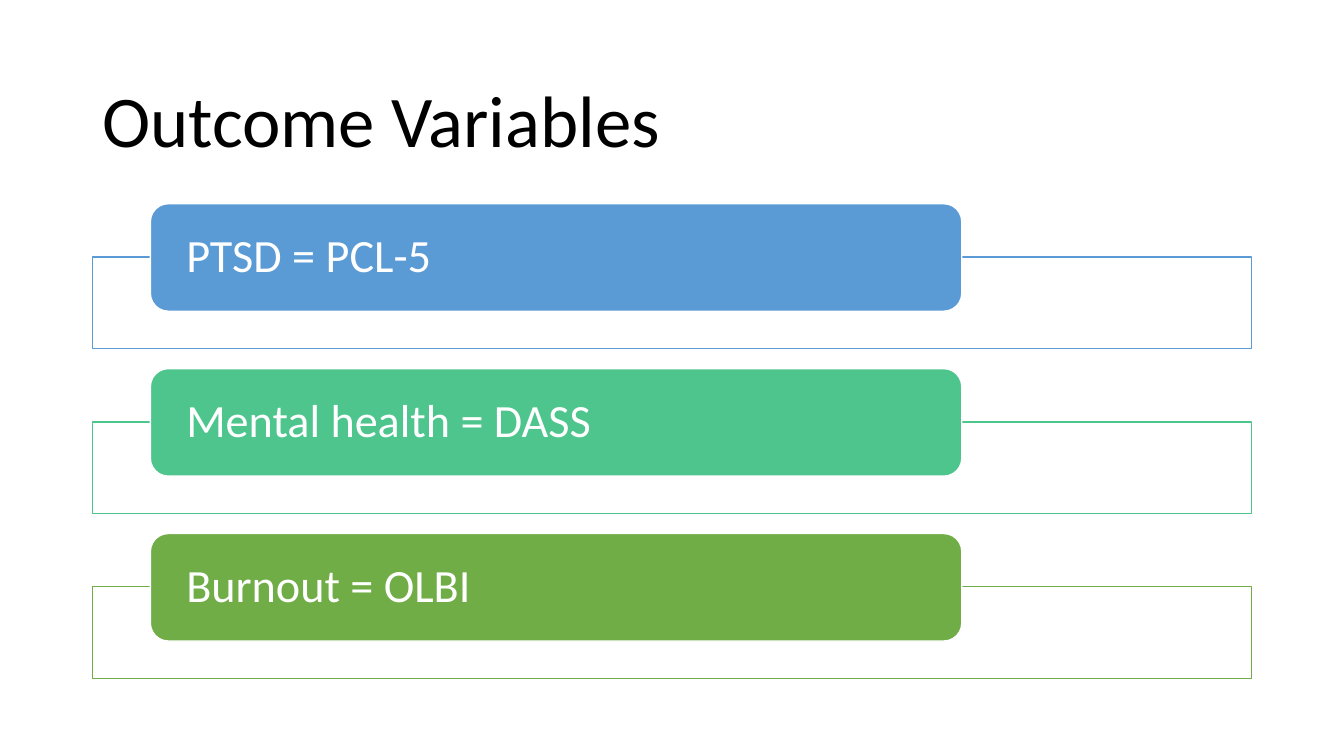
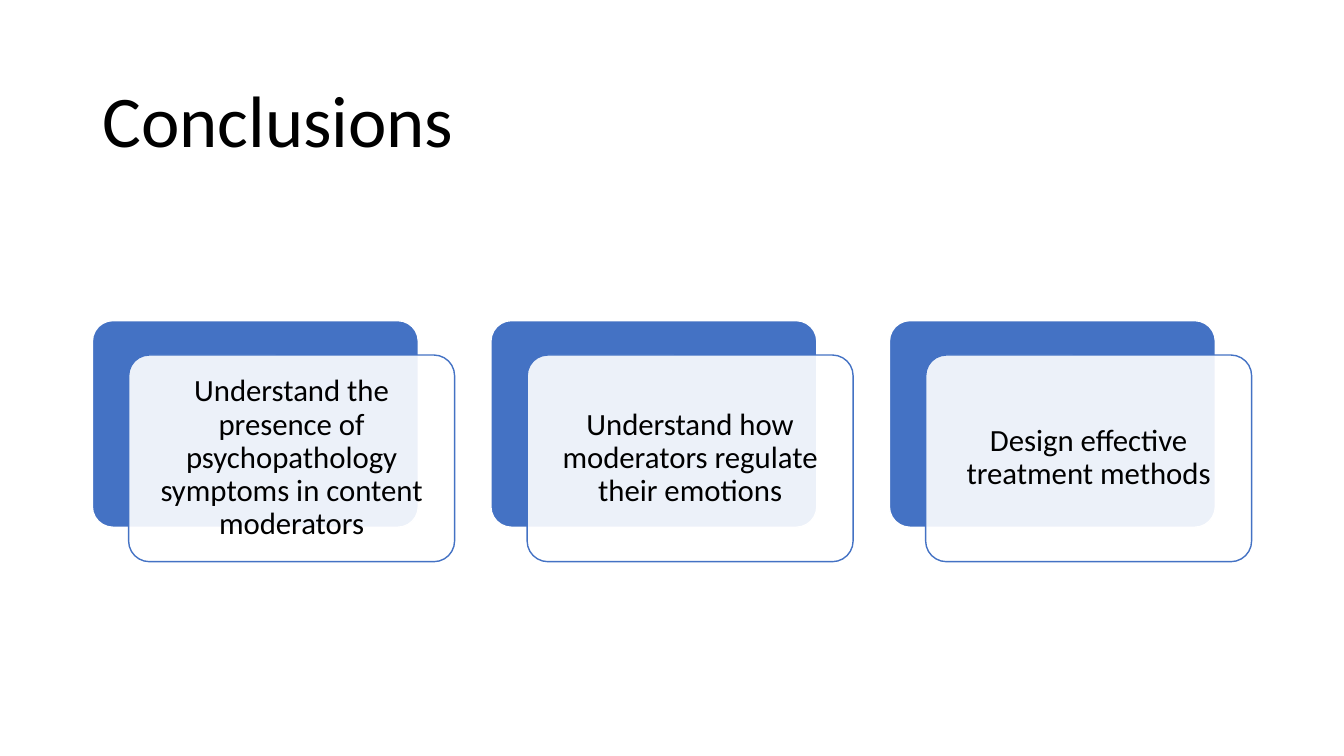
import dataclasses

import lxml.etree
import pptx
import pptx.dml.color
import pptx.enum.shapes
import pptx.enum.text
import pptx.oxml.ns
import pptx.util

Pt = pptx.util.Pt
RGBColor = pptx.dml.color.RGBColor
MSO_SHAPE = pptx.enum.shapes.MSO_SHAPE
PP_ALIGN = pptx.enum.text.PP_ALIGN


@dataclasses.dataclass(frozen=True)
class Theme:
    font: str = "Calibri"
    black: str = "000000"
    white: str = "FFFFFF"
    blue: str = "4472C4"
    light_blue: str = "5B9BD5"
    mint: str = "4DC58D"
    green: str = "70AD47"
    title_size: int = 52
    label_size: int = 33
    card_size: int = 22
    left: int = 66
    width: int = 828


theme = Theme()


def add_panel(slide, kind, box, fill, line, opacity=100):
    shape = slide.shapes.add_shape(kind, *[Pt(length) for length in box])
    shape.shadow.inherit = False
    shape.fill.solid()
    shape.fill.fore_color.rgb = RGBColor.from_string(fill)
    shape.line.color.rgb = RGBColor.from_string(line)
    shape.line.width = Pt(1)
    if opacity < 100:
        color = shape.fill._xPr.find(".//" + pptx.oxml.ns.qn("a:srgbClr"))
        alpha = lxml.etree.SubElement(color, pptx.oxml.ns.qn("a:alpha"))
        alpha.set("val", str(opacity * 1000))
    return shape


def write_text(shape, text, size, color, insets, alignment=PP_ALIGN.LEFT):
    frame = shape.text_frame
    frame.word_wrap = True
    frame.vertical_anchor = pptx.enum.text.MSO_ANCHOR.MIDDLE
    frame.margin_left = frame.margin_right = Pt(insets[0])
    frame.margin_top = frame.margin_bottom = Pt(insets[1])
    frame.text = text
    paragraph = frame.paragraphs[0]
    paragraph.alignment = alignment
    paragraph.line_spacing = 0.9
    font = paragraph.runs[0].font
    font.name = theme.font
    font.size = Pt(size)
    font.color.rgb = RGBColor.from_string(color)


presentation = pptx.Presentation()
presentation.slide_width = Pt(960)
presentation.slide_height = Pt(540)

slides = []
for title in ("Outcome Variables", "Conclusions"):
    slide = presentation.slides.add_slide(presentation.slide_layouts[6])
    title_box = slide.shapes.add_textbox(Pt(theme.left), Pt(44), Pt(theme.width), Pt(89))
    write_text(title_box, title, theme.title_size, theme.black, (7.2, 3.6))
    slides.append(slide)
variables_slide, conclusions_slide = slides

variables = [
    ("PTSD = PCL-5", theme.light_blue),
    ("Mental health = DASS", theme.mint),
    ("Burnout = OLBI", theme.green),
]
row_pitch = 117.8
for index, (text, color) in enumerate(variables):
    label_top = 145.5 + index * row_pitch
    frame_box = (theme.left, label_top + 38, theme.width, 65.5)
    add_panel(variables_slide, MSO_SHAPE.RECTANGLE, frame_box, theme.white, color, 90)
    label_box = (107.4, label_top, 579.6, 76.8)
    label = add_panel(variables_slide, MSO_SHAPE.ROUNDED_RECTANGLE, label_box, color, theme.white)
    write_text(label, text, theme.label_size, theme.white, (21.9, 0))

conclusions = [
    "Understand the presence of psychopathology symptoms in content moderators",
    "Understand how moderators regulate their emotions",
    "Design effective treatment methods",
]
card_width, card_height, card_top = 232.8, 147.6, 229
card_shift, card_drop = 25.9, 24.6
card_pitch = (theme.width - card_width - card_shift) / (len(conclusions) - 1)
for index, text in enumerate(conclusions):
    left = theme.left + index * card_pitch
    back_box = (left, card_top, card_width, card_height)
    front_box = (left + card_shift, card_top + card_drop, card_width, card_height)
    back = add_panel(conclusions_slide, MSO_SHAPE.ROUNDED_RECTANGLE, back_box, theme.blue, theme.white)
    front = add_panel(conclusions_slide, MSO_SHAPE.ROUNDED_RECTANGLE, front_box, theme.white, theme.blue, 90)
    back.adjustments[0] = front.adjustments[0] = 0.1
    write_text(front, text, theme.card_size, theme.black, (6.6, 6.6), PP_ALIGN.CENTER)

presentation.save("out.pptx")
